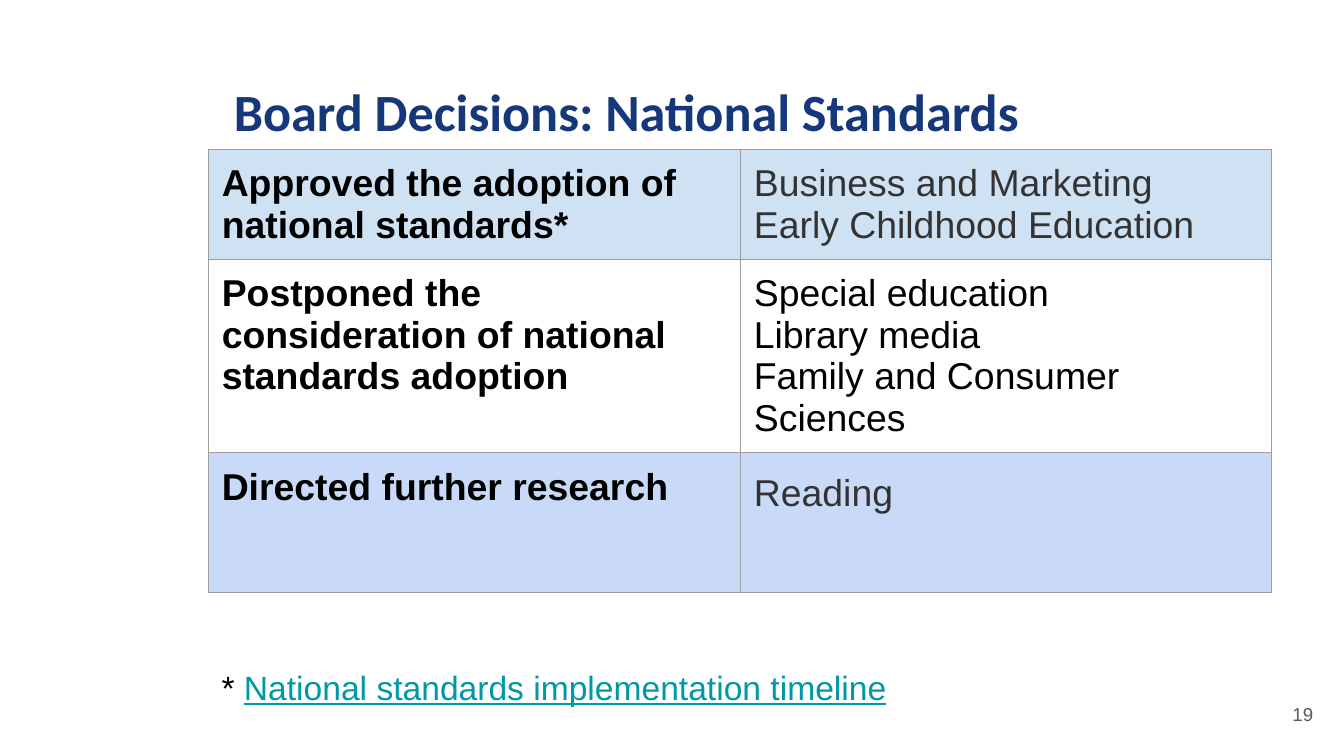
from pptx import Presentation
from pptx.dml.color import RGBColor
from pptx.enum.text import MSO_ANCHOR, MSO_AUTO_SIZE, PP_ALIGN
from pptx.oxml import parse_xml
from pptx.oxml.ns import nsdecls
from pptx.util import Pt

COLORS = {
    "page": "FFFFFF", "navy": "16387B", "black": "000000", "dark": "333333",
    "gray": "595959", "border": "9E9E9E", "teal": "0097A7",
    "sky": "CFE2F3", "periwinkle": "C9DAF8",
}
INSET = Pt(7.2)
ROW_HEIGHTS = (55.4, 97.9, 74.9)
COLUMN_WIDTHS = (285.1, 284.4)

# Decision, subjects, row fill, subject color, subject paragraph format
DECISIONS = [
    ("Approved the adoption of national standards*",
     ["Business and Marketing", "Early Childhood Education"], "sky", "dark", {}),
    ("Postponed the consideration of national standards adoption",
     ["Special education", "Library media", "Family and Consumer Sciences"],
     "page", "black", {}),
    ("Directed further research", ["Reading"], "periwinkle", "dark",
     {"line_spacing": 1.15, "space_after": Pt(42)}),
]


def color(name):
    return RGBColor.from_string(COLORS[name])


def add_text(para, text, size=20, font="Arial", ink="black", bold=False, underline=False):
    span = para.add_run()
    span.text = text
    span.font.size = Pt(size)
    span.font.name = font
    span.font.bold = bold
    span.font.underline = underline
    span.font.color.rgb = color(ink)


def set_insets(holder):
    holder.margin_left = holder.margin_right = INSET
    holder.margin_top = holder.margin_bottom = INSET


class SlideBuilder:
    def __init__(self, deck):
        self.page = deck.slides.add_slide(deck.slide_layouts[5])
        self.page.background.fill.solid()
        self.page.background.fill.fore_color.rgb = color("page")

    def prepare(self, box, anchor, align):
        """Set the frame format and return its first paragraph."""
        frame = box.text_frame
        frame.word_wrap = True
        frame.auto_size = MSO_AUTO_SIZE.NONE
        frame.vertical_anchor = anchor
        set_insets(frame)
        para = frame.paragraphs[0]
        para.alignment = align
        return para

    def title(self, text, left, top, width, height):
        box = self.page.shapes.title
        box.left, box.top, box.width, box.height = map(Pt, (left, top, width, height))
        para = self.prepare(box, MSO_ANCHOR.TOP, PP_ALIGN.LEFT)
        add_text(para, text, size=28, font="Calibri", ink="navy", bold=True)

    def text(self, spans, left, top, width, height, anchor=MSO_ANCHOR.TOP, align=PP_ALIGN.LEFT):
        box = self.page.shapes.add_textbox(*map(Pt, (left, top, width, height)))
        para = self.prepare(box, anchor, align)
        for text, style in spans:
            add_text(para, text, **style)

    def cell(self, cell, lines, fill, ink="black", bold=False, spacing=None):
        set_insets(cell)
        cell.vertical_anchor = MSO_ANCHOR.TOP
        frame = cell.text_frame
        for index, line in enumerate(lines):
            para = frame.add_paragraph() if index else frame.paragraphs[0]
            for name, value in (spacing or {}).items():
                setattr(para, name, value)
            add_text(para, line, ink=ink, bold=bold)
        properties = cell._tc.get_or_add_tcPr()
        for side in ("lnL", "lnR", "lnT", "lnB"):
            properties.append(parse_xml(
                f'<a:{side} {nsdecls("a")} w="{Pt(0.75)}"><a:solidFill>'
                f'<a:srgbClr val="{COLORS["border"]}"/></a:solidFill></a:{side}>'))
        cell.fill.solid()
        cell.fill.fore_color.rgb = color(fill)

    def decision_table(self, left, top):
        table = self.page.shapes.add_table(
            len(ROW_HEIGHTS), len(COLUMN_WIDTHS), Pt(left), Pt(top),
            Pt(sum(COLUMN_WIDTHS)), Pt(sum(ROW_HEIGHTS))).table
        table.first_row = table.horz_banding = False
        for column, width in zip(table.columns, COLUMN_WIDTHS):
            column.width = Pt(width)
        for index, (decision, subjects, fill, ink, spacing) in enumerate(DECISIONS):
            table.rows[index].height = Pt(ROW_HEIGHTS[index])
            self.cell(table.cell(index, 0), [decision], fill, bold=True)
            self.cell(table.cell(index, 1), subjects, fill, ink=ink, spacing=spacing)


def main():
    deck = Presentation()
    deck.slide_width, deck.slide_height = Pt(720), Pt(405)
    slide = SlideBuilder(deck)
    slide.title("Board Decisions: National Standards", 118.1, 35.3, 577.4, 45.4)
    slide.text([("19", {"size": 10, "ink": "gray"})], 667.4, 367.2, 43.2, 31,
               anchor=MSO_ANCHOR.MIDDLE, align=PP_ALIGN.RIGHT)
    slide.decision_table(111.6, 79.9)
    slide.text([("* ", {"size": 18}),
                ("National standards implementation timeline",
                 {"size": 18, "ink": "teal", "underline": True})],
               111.6, 349.9, 577.4, 38.9)
    deck.save("out.pptx")


if __name__ == "__main__":
    main()
